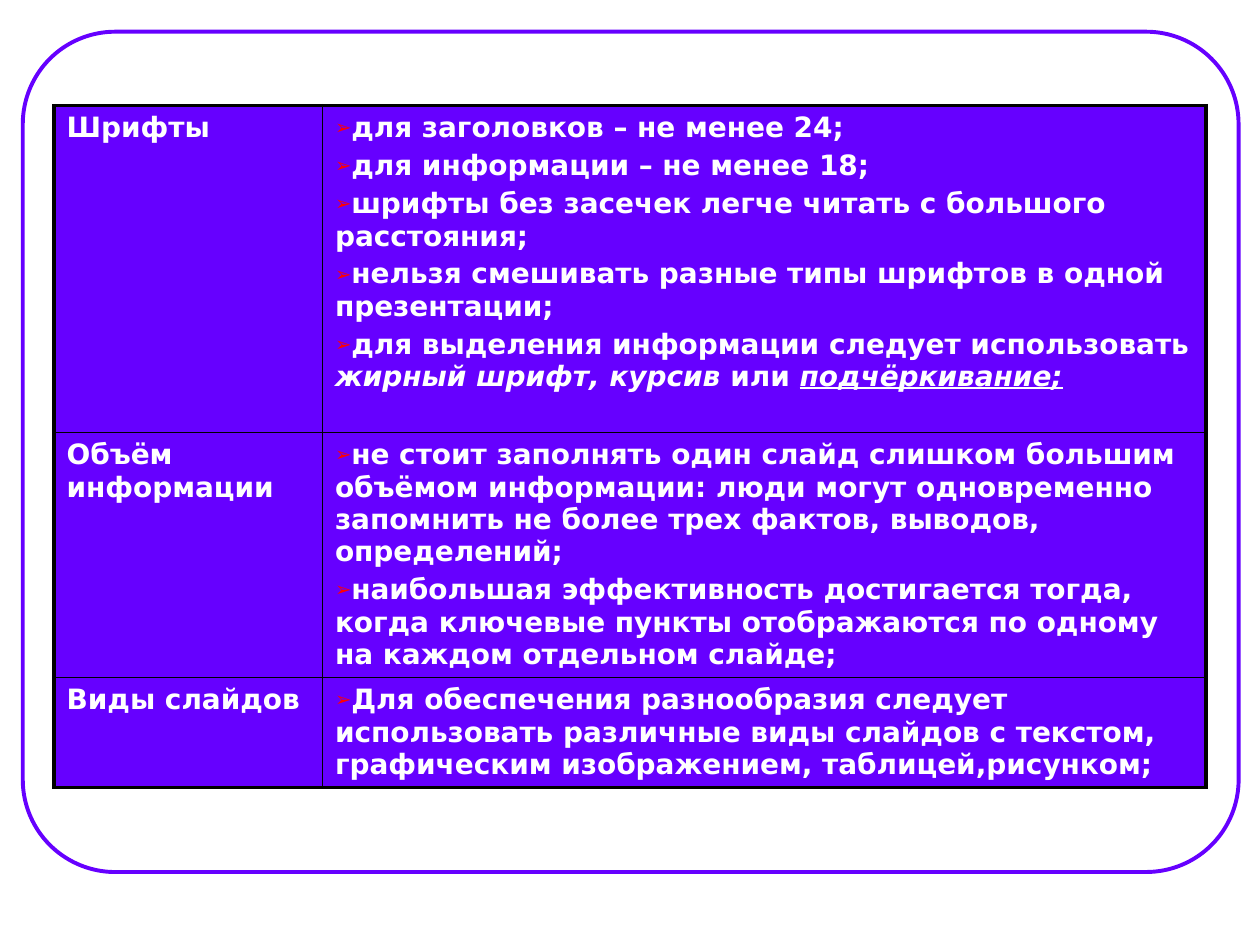
from dataclasses import dataclass

from lxml.etree import SubElement
from pptx import Presentation
from pptx.dml.color import RGBColor as Color
from pptx.enum.shapes import MSO_SHAPE as Shape
from pptx.oxml.ns import qn
from pptx.util import Cm, Pt


@dataclass(frozen=True)
class Theme:
    violet: str = "6600FF"
    white: str = "FFFFFF"
    black: str = "000000"
    red: str = "FF0000"
    font: str = "DejaVu Sans"
    text_size: float = 16
    space_before: float = 3.2
    bullet_size: int = 70
    thick: float = 2.25
    thin: float = 1


THEME = Theme()
ITALIC = {"italic": True}
UNDERLINED = {"italic": True, "underline": True}

# Each row: topic, then bullet points made of (text, format) spans
ROWS = [
    ("Шрифты", [
        [("для заголовков – не менее 24;", {})],
        [("для информации – не менее 18;", {})],
        [("шрифты без засечек легче читать с большого расстояния;", {})],
        [("нельзя смешивать разные типы шрифтов в одной презентации;", {})],
        [("для выделения информации следует использовать ", {}),
         ("жирный шрифт, курсив", ITALIC),
         (" или ", {}),
         ("подчёркивание;", UNDERLINED)],
    ]),
    ("Объём информации", [
        [("не стоит заполнять один слайд слишком большим объёмом информации: "
          "люди могут одновременно запомнить не более трех фактов, выводов, "
          "определений;", {})],
        [("наибольшая эффективность достигается тогда, когда ключевые пункты "
          "отображаются по одному на каждом отдельном слайде;", {})],
    ]),
    ("Виды слайдов", [
        [("Для обеспечения разнообразия следует использовать различные виды "
          "слайдов с текстом, графическим изображением, таблицей,рисунком;", {})],
    ]),
]
COLUMN_WIDTHS = [5.41, 17.81]
ROW_HEIGHTS = [6.59, 4.94, 2.2]


def add_fill(parent, color):
    fill = SubElement(parent, qn("a:solidFill"))
    SubElement(fill, qn("a:srgbClr"), val=color)


def set_borders(cell, widths):
    properties = cell._tc.get_or_add_tcPr()
    for side in "LRTB":
        line = SubElement(properties, qn(f"a:ln{side}"), w=str(Pt(widths[side])))
        add_fill(line, THEME.black)


def add_bullet(para):
    properties = para._p.get_or_add_pPr()
    properties.set("marL", "0")
    properties.set("indent", "0")
    color = SubElement(properties, qn("a:buClr"))
    SubElement(color, qn("a:srgbClr"), val=THEME.red)
    SubElement(properties, qn("a:buSzPct"), val=str(THEME.bullet_size * 1000))
    SubElement(properties, qn("a:buFont"), typeface=THEME.font)
    SubElement(properties, qn("a:buChar"), char="➢")


def write_paragraphs(cell, paragraphs, bulleted):
    frame = cell.text_frame
    for index, spans in enumerate(paragraphs):
        para = frame.add_paragraph() if index else frame.paragraphs[0]
        para.space_before = Pt(THEME.space_before)
        if bulleted:
            add_bullet(para)
        for text, extra in spans:
            span = para.add_run()
            span.text = text
            formats = {"name": THEME.font, "size": Pt(THEME.text_size), "bold": True}
            for name, value in (formats | extra).items():
                setattr(span.font, name, value)
            span.font.color.rgb = Color.from_string(THEME.white)


def add_frame(page, left, top, width, height):
    """Rounded outline around the page."""
    box = page.shapes.add_shape(Shape.ROUNDED_RECTANGLE,
                                Cm(left), Cm(top), Cm(width), Cm(height))
    box.adjustments[0] = 0.11
    box.shadow.inherit = False
    box.fill.background()
    box.line.color.rgb = Color.from_string(THEME.violet)
    box.line.width = Pt(THEME.thick)


def add_advice_table(page, left, top):
    """Topics on the left, bulleted advice on the right."""
    table = page.shapes.add_table(
        len(ROWS), len(COLUMN_WIDTHS), Cm(left), Cm(top),
        Cm(sum(COLUMN_WIDTHS)), Cm(sum(ROW_HEIGHTS))).table
    for name in ("first_row", "horz_banding"):
        setattr(table, name, False)
    for column, width in zip(table.columns, COLUMN_WIDTHS):
        column.width = Cm(width)
    for row, height in zip(table.rows, ROW_HEIGHTS):
        row.height = Cm(height)

    last_row, last_column = len(ROWS) - 1, len(COLUMN_WIDTHS) - 1
    for r, (topic, points) in enumerate(ROWS):
        for c, paragraphs in enumerate(([[(topic, {})]], points)):
            cell = table.cell(r, c)
            # Thick lines on the outer edge, thin ones inside
            outer = {"L": c == 0, "R": c == last_column,
                     "T": r == 0, "B": r == last_row}
            set_borders(cell, {side: THEME.thick if edge else THEME.thin
                               for side, edge in outer.items()})
            cell.fill.solid()
            cell.fill.fore_color.rgb = Color.from_string(THEME.violet)
            write_paragraphs(cell, paragraphs, bulleted=c > 0)


def main():
    deck = Presentation()
    deck.slide_width, deck.slide_height = Cm(25.4), Cm(19.05)
    page = deck.slides.add_slide(deck.slide_layouts[6])
    add_frame(page, 0.46, 0.64, 24.51, 16.94)
    add_advice_table(page, 1.09, 2.13)
    deck.save("out.pptx")


if __name__ == "__main__":
    main()
